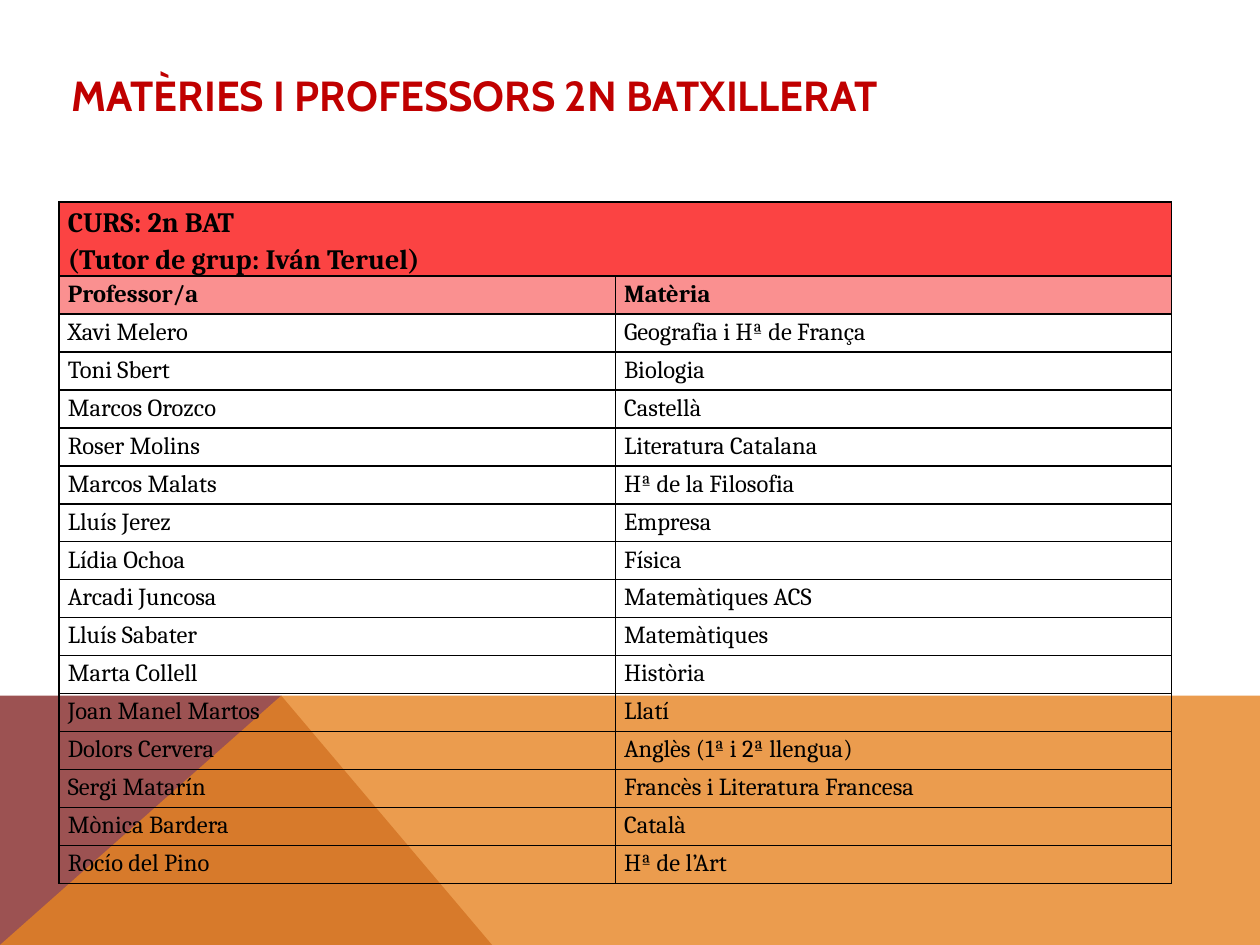
"""Build the slide listing the teachers and subjects of the 2n BAT course."""
from dataclasses import dataclass

from lxml import etree
from pptx import Presentation
from pptx.dml.color import RGBColor
from pptx.enum.text import MSO_ANCHOR, MSO_AUTO_SIZE, PP_ALIGN
from pptx.oxml.ns import qn
from pptx.util import Pt

BOTTOM, TOP = MSO_ANCHOR.BOTTOM, MSO_ANCHOR.TOP
NO_AUTOFIT = MSO_AUTO_SIZE.NONE
LEFT = PP_ALIGN.LEFT

TITLE = "MATÈRIES I PROFESSORS 2N BATXILLERAT"
COURSE = "CURS: 2n BAT\n(Tutor de grup: Iván Teruel)"
COLUMN_NAMES = ("Professor/a", "Matèria")
TEACHERS = [
    ("Xavi Melero", "Geografia i Hª de França"),
    ("Toni Sbert", "Biologia"),
    ("Marcos Orozco", "Castellà"),
    ("Roser Molins", "Literatura Catalana"),
    ("Marcos Malats", "Hª de la Filosofia"),
    ("Lluís Jerez", "Empresa"),
    ("Lídia Ochoa", "Física"),
    ("Arcadi Juncosa", "Matemàtiques ACS"),
    ("Lluís Sabater", "Matemàtiques"),
    ("Marta Collell", "Història"),
    ("Joan Manel Martos", "Llatí"),
    ("Dolors Cervera", "Anglès (1ª i 2ª llengua)"),
    ("Sergi Matarín", "Francès i Literatura Francesa"),
    ("Mònica Bardera", "Català"),
    ("Rocío del Pino", "Hª de l’Art"),
]


@dataclass(frozen=True)
class Theme:
    title_font: str = "Cabin"
    table_font: str = "Cambria"
    title_size: float = 24
    course_size: float = 16
    body_size: float = 14
    title_color: str = "C00000"
    text_color: str = "000000"
    course_fill: str = "FB4343"
    heading_fill: str = "FA9090"
    purple: str = "9C5252"
    orange: str = "E68422"
    orange_opacity: int = 80


THEME = Theme()
SLIDE_WIDTH, SLIDE_HEIGHT = 720, 540
BAND_TOP, PEAK, FOOT = 397.5, 160.75, 281.25
MARGIN = 33.75
TITLE_BOX = (MARGIN, 16.5, 648, 55.5)
TABLE_TOP, TABLE_WIDTH = 115.5, 635.75
COURSE_HEIGHT, ROW_HEIGHT = 42.25, 21.7
CELL_INSET, LINE_SPACING, BORDER_WIDTH = 5, 1.15, 1

BANDS = [
    (THEME.purple, 100, [(0, SLIDE_HEIGHT), (0, BAND_TOP), (PEAK, BAND_TOP), (FOOT, SLIDE_HEIGHT)]),
    (THEME.orange, THEME.orange_opacity,
     [(0, SLIDE_HEIGHT), (PEAK, BAND_TOP), (SLIDE_WIDTH, BAND_TOP), (SLIDE_WIDTH, SLIDE_HEIGHT)]),
]


def style_runs(paragraph, font_name, size, color, bold):
    for run in paragraph.runs:
        run.font.name = font_name
        run.font.size = Pt(size)
        run.font.bold = bold
        run.font.color.rgb = RGBColor.from_string(color)


def add_band(slide, color, opacity, points):
    corners = [(Pt(x), Pt(y)) for x, y in points]
    builder = slide.shapes.build_freeform(*corners[0])
    builder.add_line_segments(corners[1:], close=True)
    shape = builder.convert_to_shape()
    shape.shadow.inherit = False
    shape.line.fill.background()
    shape.fill.solid()
    shape.fill.fore_color.rgb = RGBColor.from_string(color)
    if opacity < 100:
        color_element = shape.fill._xPr.find(".//" + qn("a:srgbClr"))
        etree.SubElement(color_element, qn("a:alpha"), val=str(opacity * 1000))


def add_title(slide):
    title = slide.shapes.title
    title.left, title.top, title.width, title.height = map(Pt, TITLE_BOX)
    frame = title.text_frame
    frame.text = TITLE
    frame.auto_size = NO_AUTOFIT
    frame.vertical_anchor = BOTTOM
    paragraph = frame.paragraphs[0]
    paragraph.alignment = LEFT
    style_runs(paragraph, THEME.title_font, THEME.title_size, THEME.title_color, True)


def add_borders(cell):
    properties = cell._tc.get_or_add_tcPr()
    for position, side in enumerate(("a:lnL", "a:lnR", "a:lnT", "a:lnB")):
        line = etree.Element(qn(side), w=str(Pt(BORDER_WIDTH)))
        fill = etree.SubElement(line, qn("a:solidFill"))
        etree.SubElement(fill, qn("a:srgbClr"), val=THEME.text_color)
        properties.insert(position, line)


def format_cell(cell, text, size, bold, fill):
    cell.text_frame.text = text
    cell.margin_left = cell.margin_right = Pt(CELL_INSET)
    cell.margin_top = cell.margin_bottom = 0
    cell.vertical_anchor = TOP
    for paragraph in cell.text_frame.paragraphs:
        paragraph.line_spacing = LINE_SPACING
        style_runs(paragraph, THEME.table_font, size, THEME.text_color, bold)
    if fill:
        cell.fill.solid()
        cell.fill.fore_color.rgb = RGBColor.from_string(fill)
    else:
        cell.fill.background()
    add_borders(cell)


def add_teacher_table(slide):
    rows = [(COURSE, ""), COLUMN_NAMES, *TEACHERS]
    styles = [(THEME.course_size, True, THEME.course_fill), (THEME.body_size, True, THEME.heading_fill)]
    styles += [(THEME.body_size, False, None)] * len(TEACHERS)
    height = COURSE_HEIGHT + ROW_HEIGHT * (len(rows) - 1)
    frame = slide.shapes.add_table(
        len(rows), len(COLUMN_NAMES), Pt(MARGIN), Pt(TABLE_TOP), Pt(TABLE_WIDTH), Pt(height))
    table = frame.table
    table.first_row = table.horz_banding = False
    for index, (texts, style) in enumerate(zip(rows, styles)):
        table.rows[index].height = Pt(ROW_HEIGHT if index else COURSE_HEIGHT)
        for column, text in enumerate(texts):
            format_cell(table.cell(index, column), text, *style)
    table.cell(0, 0).merge(table.cell(0, len(COLUMN_NAMES) - 1))


def main():
    presentation = Presentation()
    presentation.slide_width, presentation.slide_height = Pt(SLIDE_WIDTH), Pt(SLIDE_HEIGHT)
    slide = presentation.slides.add_slide(presentation.slide_layouts[5])
    for band in BANDS:
        add_band(slide, *band)
    add_title(slide)
    add_teacher_table(slide)
    presentation.save("out.pptx")


if __name__ == "__main__":
    main()
